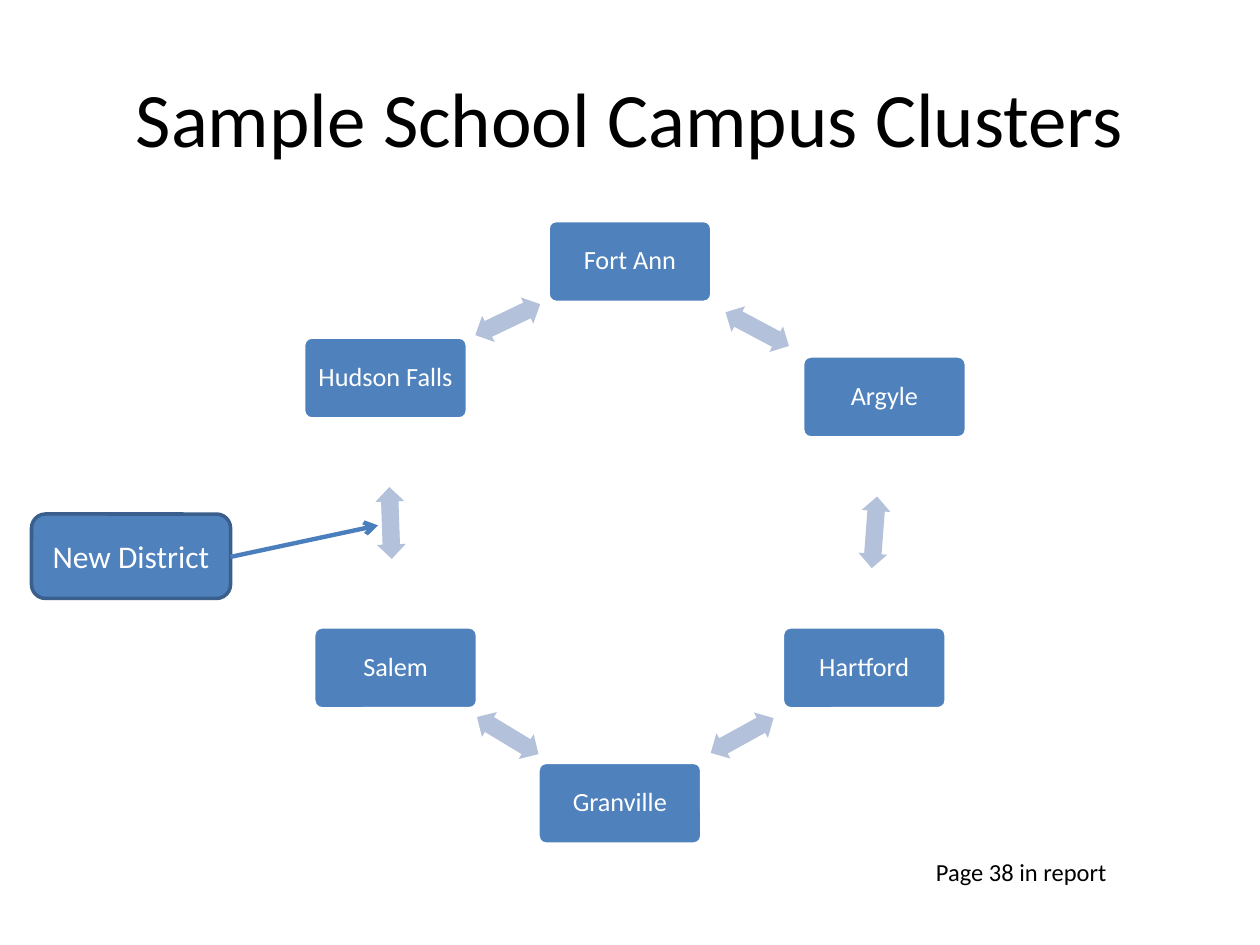
"""Builds the school campus clusters slide: a ring of districts joined by arrows."""
import math
from dataclasses import dataclass

import lxml.etree
import pptx
import pptx.dml.color
import pptx.enum.shapes
import pptx.enum.text
import pptx.oxml.ns
import pptx.util

SHAPE = pptx.enum.shapes.MSO_SHAPE
ALIGN = pptx.enum.text.PP_ALIGN
ANCHOR = pptx.enum.text.MSO_ANCHOR
COLS, ROWS = 100, 75


@dataclass(frozen=True)
class Theme:
    font: str = "Calibri"
    ink: str = "000000"
    paper: str = "FFFFFF"
    box: str = "4F81BD"
    border: str = "3A5F8C"
    arrow: str = "B3C1DB"
    pointer: str = "4B7EBC"
    title_size: int = 44
    callout_size: int = 18
    node_size: int = 15
    note_size: int = 14


class Deck:
    def __init__(self, theme):
        self.theme = theme
        self.prs = pptx.Presentation()
        self.prs.slide_width = pptx.util.Inches(10)
        self.prs.slide_height = pptx.util.Inches(7.5)
        self.s = self.prs.slides.add_slide(self.prs.slide_layouts[6])

    def grid(self, *lengths):
        units = (self.prs.slide_width / COLS, self.prs.slide_height / ROWS)
        return [round(n * units[i % 2]) for i, n in enumerate(lengths)]

    def rgb(self, color):
        return pptx.dml.color.RGBColor.from_string(color)

    def label(self, sp, text, size, color, align=ALIGN.CENTER, anchor=ANCHOR.MIDDLE):
        tf = sp.text_frame
        tf.word_wrap = True
        tf.vertical_anchor = anchor
        tf.text = text
        p = tf.paragraphs[0]
        p.alignment = align
        for r in p.runs:
            r.font.name = self.theme.font
            r.font.size = pptx.util.Pt(size)
            r.font.color.rgb = self.rgb(color)

    def text(self, at, text, size, **layout):
        sp = self.s.shapes.add_textbox(*self.grid(*at))
        self.label(sp, text, size, self.theme.ink, **layout)

    def shape(self, kind, at, fill, line=None):
        sp = self.s.shapes.add_shape(kind, *self.grid(*at))
        sp.shadow.inherit = False
        sp.fill.solid()
        sp.fill.fore_color.rgb = self.rgb(fill)
        if line:
            sp.line.color.rgb = self.rgb(line)
            sp.line.width = pptx.util.Pt(2)
        else:
            sp.line.fill.background()
        return sp

    def node(self, center, text, width=13, height=6.5):
        x, y = center
        at = (x - width / 2, y - height / 2, width, height)
        sp = self.shape(SHAPE.ROUNDED_RECTANGLE, at, self.theme.box, self.theme.paper)
        sp.adjustments[0] = 0.1
        self.label(sp, text, self.theme.node_size, self.theme.paper)
        tf = sp.text_frame
        tf.margin_left = tf.margin_right = pptx.util.Inches(0.06)
        tf.margin_top = tf.margin_bottom = pptx.util.Inches(0.06)
        tf.paragraphs[0].line_spacing = 0.9

    def link(self, start, end, width=5.7, height=2.3):
        (x1, y1), (x2, y2) = start, end
        at = ((x1 + x2 - width) / 2, (y1 + y2 - height) / 2, width, height)
        sp = self.shape(SHAPE.LEFT_RIGHT_ARROW, at, self.theme.arrow)
        sp.adjustments[0], sp.adjustments[1] = 0.6, 0.5
        sp.rotation = math.degrees(math.atan2(y2 - y1, x2 - x1)) % 360

    def callout(self, at, text):
        sp = self.shape(SHAPE.ROUNDED_RECTANGLE, at, self.theme.box, self.theme.border)
        self.label(sp, text, self.theme.callout_size, self.theme.paper)

    def pointer(self, start, end):
        kind = pptx.enum.shapes.MSO_CONNECTOR.STRAIGHT
        sp = self.s.shapes.add_connector(kind, *self.grid(*start, *end))
        sp.line.color.rgb = self.rgb(self.theme.pointer)
        sp.line.width = pptx.util.Pt(2.5)
        qn = pptx.oxml.ns.qn
        props = sp.element.find(qn("p:spPr"))
        lxml.etree.SubElement(props.find(qn("a:ln")), qn("a:tailEnd"), type="arrow")
        lxml.etree.SubElement(props, qn("a:effectLst"))


def main():
    theme = Theme()
    deck = Deck(theme)
    districts = {
        "Fort Ann": (50, 20.75),
        "Argyle": (70.2, 31.5),
        "Hartford": (68.6, 53),
        "Granville": (49.2, 63.75),
        "Salem": (31.4, 53),
        "Hudson Falls": (30.6, 30),
    }
    centers = list(districts.values())

    deck.text((5, 3, 90, 12.5), "Sample School Campus Clusters", theme.title_size)
    for (name, center), following in zip(districts.items(), centers[1:] + centers[:1]):
        deck.node(center, name)
        deck.link(center, following)
    deck.text((73.3, 67.5, 21.7, 3.4), "Page 38 in report", theme.note_size,
              align=ALIGN.LEFT, anchor=ANCHOR.TOP)
    deck.callout((2.5, 40.8, 15.8, 6.7), "New District")
    deck.pointer((18.3, 44.2), (30, 41.7))
    deck.prs.save("out.pptx")


if __name__ == "__main__":
    main()
